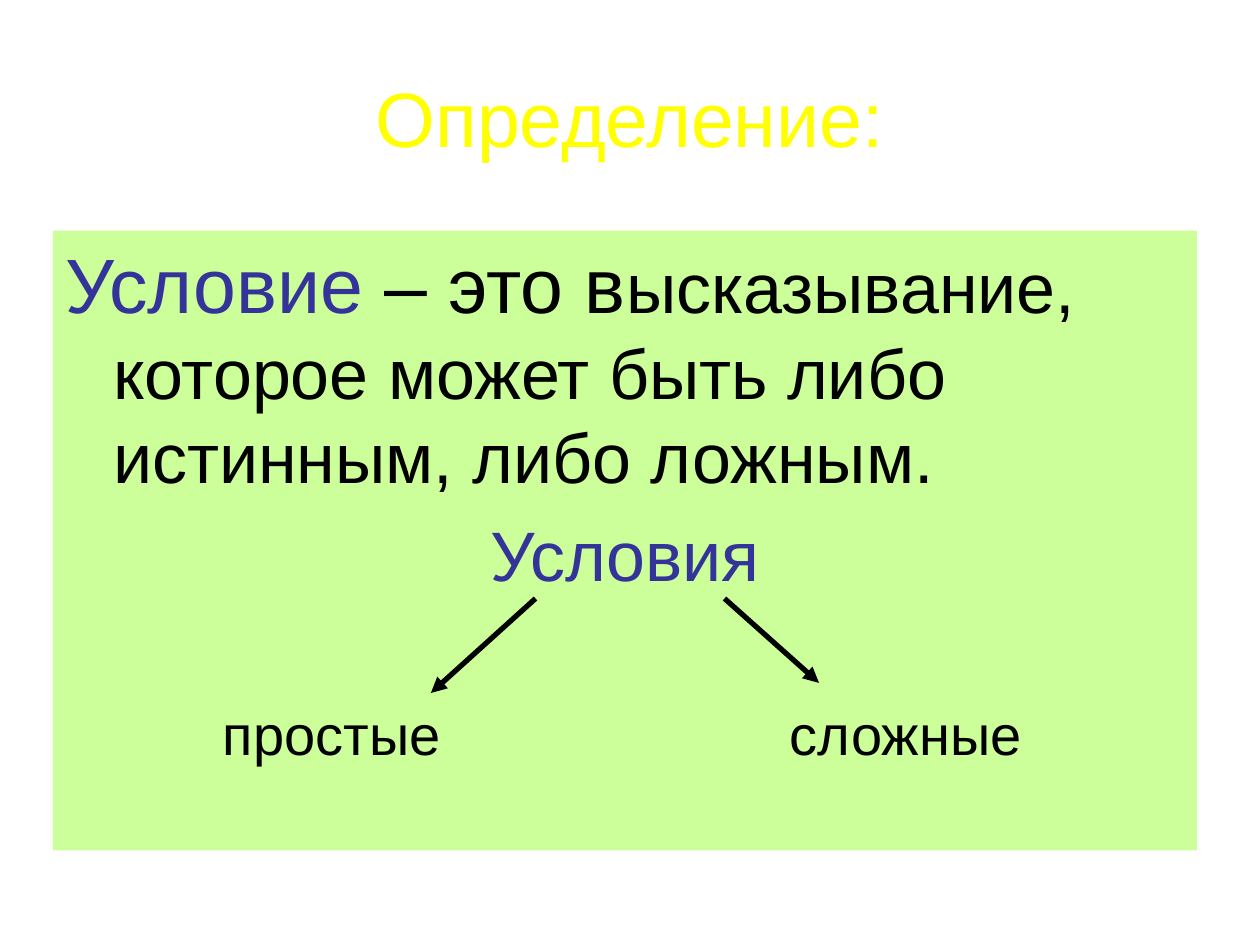
from lxml.etree import SubElement
from pptx import Presentation
from pptx.dml.color import RGBColor
from pptx.enum.shapes import MSO_CONNECTOR, MSO_SHAPE
from pptx.enum.text import MSO_ANCHOR, PP_ALIGN
from pptx.oxml.ns import qn
from pptx.util import Inches, Pt

COLORS = {"panel": "CCFF99", "title": "FFFF00", "term": "333399", "text": "000000"}
FONT = "Arial"

TITLE = ("Определение:", 44, "title")
DEFINITION = [
    ("Условие ", 44, "term"),
    ("– это в", 44, "text"),
    ("ысказывание, которое может быть либо истинным, либо ложным.", 40, "text"),
]
HEADING = [("Условия", 40, "term")]
KINDS = [
    {"label": ("простые", 32, "text"), "box": (1.67, 5.5, 2, 0.63),
     "arrow": (4.25, 4.75, 3.42, 5.5)},
    {"label": ("сложные", 32, "text"), "box": (6.17, 5.5, 2.75, 0.63),
     "arrow": (5.75, 4.75, 6.5, 5.42)},
]
HANGING = {"marL": Inches(0.38), "indent": Inches(-0.38)}


def color(name):
    return RGBColor.from_string(COLORS[name])


def add_run(paragraph, text, size, color_name):
    run = paragraph.add_run()
    run.text = text
    for name, value in {"name": FONT, "size": Pt(size), "bold": False}.items():
        setattr(run.font, name, value)
    run.font.color.rgb = color(color_name)


def format_paragraph(paragraph, runs, alignment, space_before=0):
    paragraph.alignment = alignment
    paragraph.space_before = Pt(space_before)
    for run in runs:
        add_run(paragraph, *run)


def add_title(slide):
    title = slide.shapes.title
    place = {"left": 0.5, "top": 0.3, "width": 9, "height": 1.25}
    for name, value in place.items():
        setattr(title, name, Inches(value))
    title.text_frame.vertical_anchor = MSO_ANCHOR.MIDDLE
    format_paragraph(title.text_frame.paragraphs[0], [TITLE], PP_ALIGN.CENTER)


def add_panel(slide):
    panel = slide.shapes.add_shape(
        MSO_SHAPE.RECTANGLE, *map(Inches, (0.42, 1.83, 9.08, 4.92)))
    panel.shadow.inherit = False
    panel.fill.solid()
    panel.fill.fore_color.rgb = color("panel")
    panel.line.fill.background()
    frame = panel.text_frame
    frame.word_wrap = True
    frame.vertical_anchor = MSO_ANCHOR.TOP
    format_paragraph(frame.paragraphs[0], DEFINITION, PP_ALIGN.LEFT)
    format_paragraph(frame.add_paragraph(), HEADING, PP_ALIGN.CENTER, 8)
    for paragraph in frame.paragraphs:
        properties = paragraph._p.get_or_add_pPr()
        for name, value in HANGING.items():
            properties.set(name, str(value))


def add_arrow(slide, ends):
    arrow = slide.shapes.add_connector(MSO_CONNECTOR.STRAIGHT, *map(Inches, ends))
    arrow.line.color.rgb = color("text")
    arrow.line.width = Pt(3)
    SubElement(arrow.line._get_or_add_ln(), qn("a:tailEnd"), type="triangle")
    SubElement(arrow._element.spPr, qn("a:effectLst"))


def add_label(slide, label, box):
    text_box = slide.shapes.add_textbox(*map(Inches, box))
    text_box.text_frame.word_wrap = True
    format_paragraph(text_box.text_frame.paragraphs[0], [label], PP_ALIGN.LEFT)


def main():
    presentation = Presentation()
    presentation.slide_width = Inches(10)
    presentation.slide_height = Inches(7.5)
    slide = presentation.slides.add_slide(presentation.slide_layouts[5])
    add_title(slide)
    add_panel(slide)
    for kind in KINDS:
        add_arrow(slide, kind["arrow"])
        add_label(slide, kind["label"], kind["box"])
    presentation.save("out.pptx")


if __name__ == "__main__":
    main()
